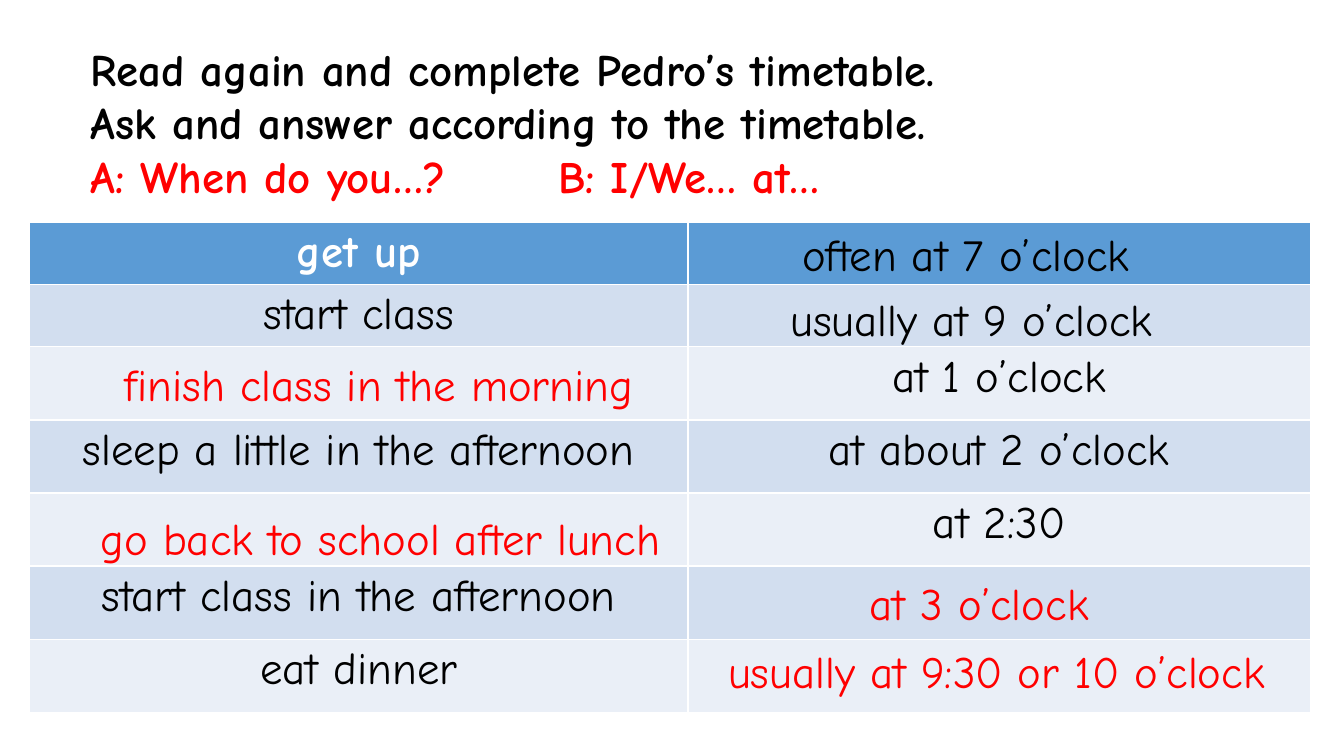
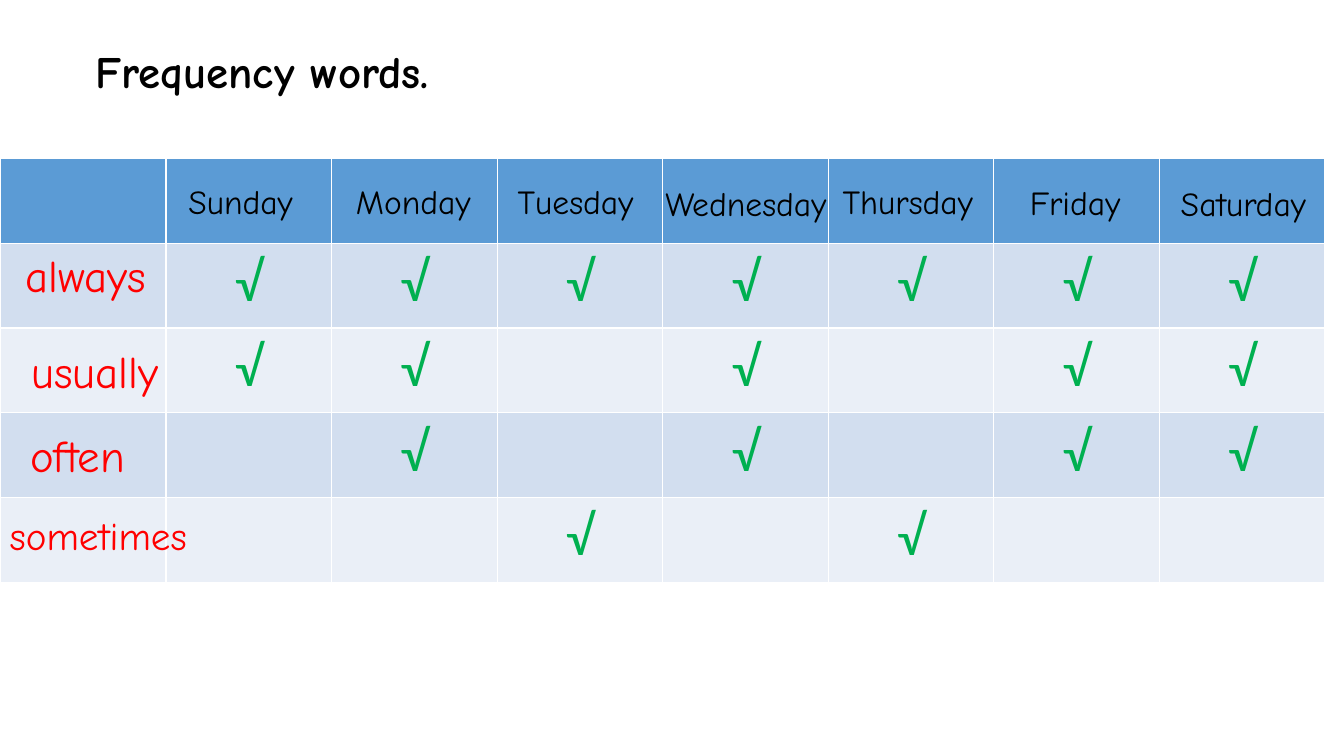
from dataclasses import dataclass

from lxml.etree import SubElement
from pptx import Presentation
from pptx.dml.color import RGBColor as Color
from pptx.enum.text import MSO_ANCHOR as Anchor, MSO_AUTO_SIZE as AutoSize, PP_ALIGN as Align
from pptx.oxml.ns import qn
from pptx.util import Pt


@dataclass(frozen=True)
class Theme:
    font: str = "Comic Neue"
    tick_font: str = "Calibri"
    black: str = "000000"
    white: str = "FFFFFF"
    red: str = "FF0000"
    green: str = "00B050"
    header: str = "5B9BD5"
    bands: tuple = ("D2DEEF", "EAEFF7")
    large: int = 32
    medium: int = 28
    small: int = 24
    tick: int = 40


THEME = Theme()
LINE_RATIO = 1.215
INSET = 3.6
TICK = "√"

TIMETABLE = {
    "title": [
        ("Read again and complete Pedro’s timetable.", THEME.black),
        ("Ask and answer according to the timetable.", THEME.black),
        ("A: When do you…?\tB: I/We… at…", THEME.red),
    ],
    "title_at": (57.6, 25.9, 704, 123.8),
    "table_at": (21.2, 158.6),
    "columns": [470.3, 444.4],
    "rows": [44.6] * 2 + [52.2] * 5,
    "cells": [
        ("get up", ""),
        ("start class", ""),
        ("", "at 1 o’clock"),
        ("sleep a little in the afternoon", "at about 2 o’clock"),
        ("", "at 2:30"),
        ("start class in the afternoon", ""),
        ("eat dinner", ""),
    ],
    "labels": [
        ("often at 7 o’clock", 690, 158.4, 278, THEME.large, THEME.black),
        ("usually at 9 o’clock", 694, 204.5, 295, THEME.large, THEME.black),
        ("finish class in the morning", 271, 251.3, 418, THEME.large, THEME.red),
        ("at 3 o’clock", 699.6, 407.5, 194, THEME.large, THEME.red),
        ("usually at 9:30 or 10 o’clock", 712, 456.5, 440, THEME.large, THEME.red),
        ("go back to school after lunch", 272, 361.4, 462, THEME.large, THEME.red),
    ],
}

DAYS = [
    ("Sunday", 171.8, 126, 96),
    ("Monday", 295.2, 126, 101),
    ("Tuesday", 411.1, 126, 108),
    ("Wednesday", 532.8, 127.4, 144),
    ("Thursday", 648.4, 126, 120),
    ("Friday", 767.9, 126.7, 87),
    ("Saturday", 888.1, 127.4, 119),
]
WORDS = [
    ("always", 61.2, 173.5, 111, THEME.large),
    ("usually", 67.7, 242, 115, THEME.large),
    ("often", 55.4, 301.7, 98, THEME.large),
    ("sometimes", 70.2, 362, 153, THEME.medium),
]
TICKED_COLUMNS = [(), (1, 2, 3, 4, 5, 6, 7), (1, 2, 4, 6, 7), (2, 4, 6, 7), (3, 5)]

FREQUENCY = {
    "title": [("Frequency words.", THEME.black)],
    "title_at": (61.2, 27.4, 288, 46.1),
    "table_at": (0.4, 113.2),
    "columns": [118.25] * 8,
    "rows": [60.6] * 5,
    "cells": [[TICK if column in ticked else "" for column in range(8)]
              for ticked in TICKED_COLUMNS],
    "labels": [(*day, THEME.small, THEME.black) for day in DAYS]
    + [(*word, THEME.red) for word in WORDS],
}

TAB_STOP = 334


def apply(target, values):
    for name, value in values.items():
        setattr(target, name, value)


def write(para, text, size=THEME.large, color=THEME.black, bold=False,
          align=Align.CENTER, font=THEME.font):
    apply(para, {"alignment": align, "line_spacing": 1.0})
    if "\t" in text:
        tabs = SubElement(para._p.get_or_add_pPr(), qn("a:tabLst"))
        SubElement(tabs, qn("a:tab"), pos=str(Pt(TAB_STOP)), algn="l")
    span = para.add_run()
    span.text = text
    apply(span.font, {"name": font, "size": Pt(size), "bold": bold})
    span.font.color.rgb = Color.from_string(color)


def add_title(page, lines, bounds):
    title = page.shapes.title
    apply(title, dict(zip(("left", "top", "width", "height"), map(Pt, bounds))))
    frame = title.text_frame
    apply(frame, {"word_wrap": True, "auto_size": AutoSize.NONE,
                  "vertical_anchor": Anchor.TOP})
    for index, (text, color) in enumerate(lines):
        para = frame.add_paragraph() if index else frame.paragraphs[0]
        write(para, text, color=color, bold=True, align=Align.LEFT)


def add_grid(page, content):
    columns, rows = content["columns"], content["rows"]
    left, top = content["table_at"]
    table = page.shapes.add_table(len(rows), len(columns), Pt(left), Pt(top),
                                  Pt(sum(columns)), Pt(sum(rows))).table
    for column, width in zip(table.columns, columns):
        column.width = Pt(width)
    for index, (row, height, texts) in enumerate(zip(table.rows, rows, content["cells"])):
        row.height = Pt(height)
        fill = THEME.bands[(index - 1) % 2] if index else THEME.header
        for cell, text in zip(row.cells, texts):
            cell.fill.solid()
            cell.fill.fore_color.rgb = Color.from_string(fill)
            para = cell.text_frame.paragraphs[0]
            if text == TICK:
                write(para, text, THEME.tick, THEME.green, font=THEME.tick_font)
            elif text:
                color = THEME.black if index else THEME.white
                write(para, text, color=color, bold=index == 0)


def add_label(page, text, center, top, width, size, color):
    height = round(size * LINE_RATIO + 2 * INSET, 2)
    box = page.shapes.add_textbox(Pt(center - width / 2), Pt(top), Pt(width), Pt(height))
    apply(box.text_frame, {"word_wrap": False, "auto_size": AutoSize.SHAPE_TO_FIT_TEXT})
    write(box.text_frame.paragraphs[0], text, size, color)


def main():
    deck = Presentation()
    apply(deck, {"slide_width": Pt(960), "slide_height": Pt(540)})
    for content in (TIMETABLE, FREQUENCY):
        page = deck.slides.add_slide(deck.slide_layouts[5])
        add_title(page, content["title"], content["title_at"])
        add_grid(page, content)
        for label in content["labels"]:
            add_label(page, *label)
    deck.save("out.pptx")


if __name__ == "__main__":
    main()
